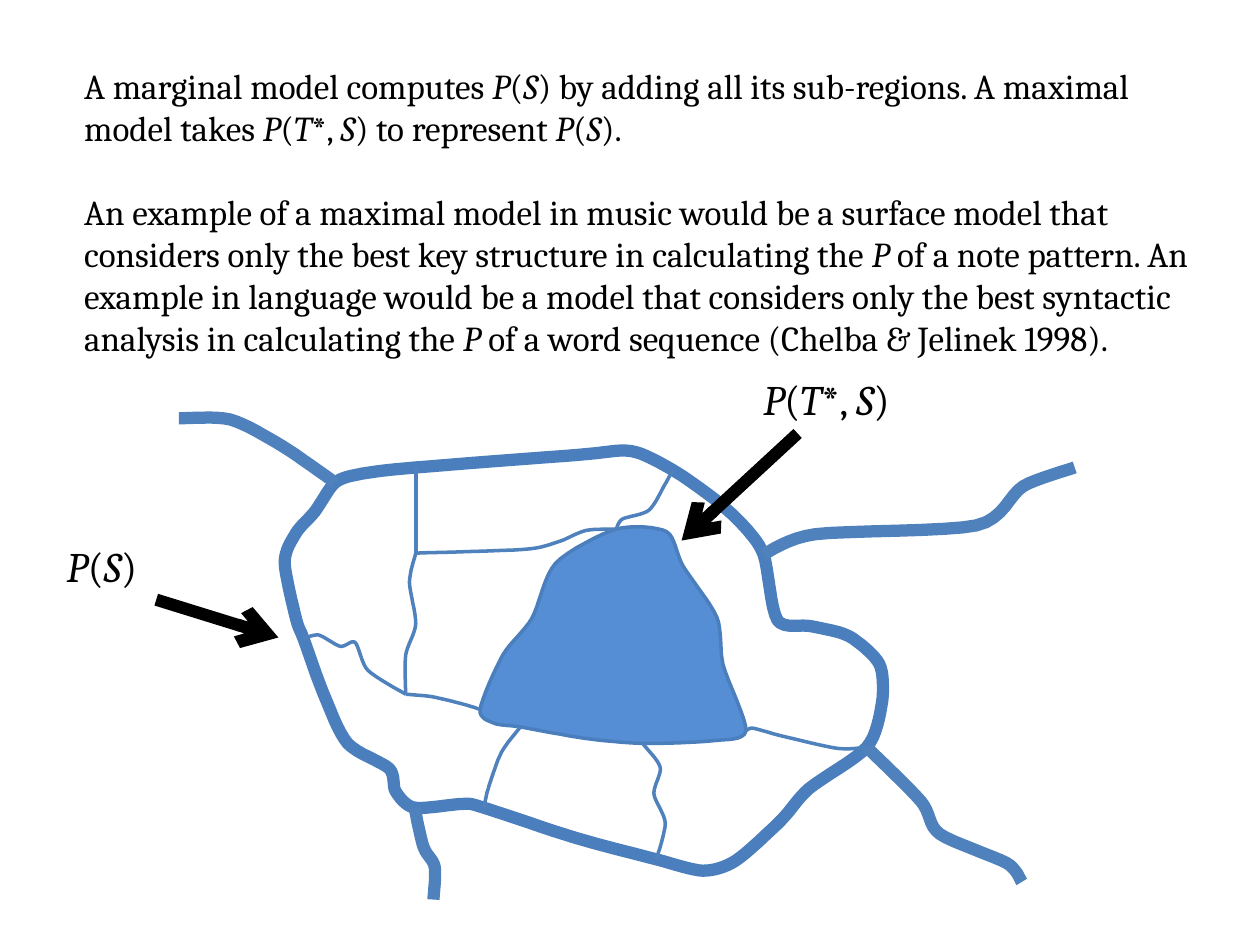
from lxml.etree import SubElement
from pptx import Presentation
from pptx.dml.color import RGBColor
from pptx.enum.shapes import MSO_CONNECTOR
from pptx.enum.text import MSO_AUTO_SIZE
from pptx.oxml.ns import qn
from pptx.util import Pt

COLORS = {"text": "000000", "outline": "4B7EBC", "branch": "4F81BD", "best": "558ED5"}
THICK, THIN = 7, 2  # line weights
UNIT = Pt(0.72)  # the map is plotted in hundredths of an inch
STEPS = 8  # pieces per bend, and the finer grid that they are rounded to
TENSION = 0.4  # 0 gives straight lines between the bends


def add_text(left, top, width, height, size, paragraphs, wrap):
    """Add a text box; underscores switch italics on and off."""
    box = page.shapes.add_textbox(Pt(left), Pt(top), Pt(width), Pt(height))
    frame = box.text_frame
    frame.word_wrap = wrap
    frame.auto_size = MSO_AUTO_SIZE.SHAPE_TO_FIT_TEXT
    for index, text in enumerate(paragraphs):
        para = frame.add_paragraph() if index else frame.paragraphs[0]
        para.space_before = Pt(24 if index else 0)
        for position, piece in enumerate(text.split("_")):
            if piece:
                span = para.add_run()
                span.text = piece
                span.font.name = "Cambria"
                span.font.size = Pt(size)
                span.font.italic = position % 2 == 1
                span.font.color.rgb = RGBColor.from_string(COLORS["text"])


def add_curve(bends, color, weight, closed=False, fill=None):
    """Draw a smooth line through the bends: a cubic Hermite curve between neighbours."""
    if closed:
        knots = [bends[-1], *bends, *bends[:2]]
    else:
        knots = [bends[0], *bends, bends[-1]]
    points = [(x * STEPS, y * STEPS) for x, y in bends[:1]]
    for before, start, end, after in zip(knots, knots[1:], knots[2:], knots[3:]):
        for step in range(1, STEPS + 1):
            t = step / STEPS
            arrive = t * t * (3 - 2 * t)
            points.append(tuple(
                STEPS * ((1 - arrive) * b + arrive * c
                         + TENSION * t * (1 - t) * ((1 - t) * (c - a) - t * (d - b)))
                for a, b, c, d in zip(before, start, end, after)))
    builder = page.shapes.build_freeform(*points[0], scale=UNIT / STEPS)
    builder.add_line_segments(points[1:], close=closed)
    curve = builder.convert_to_shape()
    curve.shadow.inherit = False
    if fill:
        curve.fill.solid()
        curve.fill.fore_color.rgb = RGBColor.from_string(COLORS[fill])
    else:
        curve.fill.background()
    curve.line.color.rgb = RGBColor.from_string(COLORS[color])
    curve.line.width = Pt(weight)
    SubElement(curve.line._get_or_add_ln(), qn("a:round"))


deck = Presentation()
deck.slide_width, deck.slide_height = Pt(720), Pt(540)
page = deck.slides.add_slide(deck.slide_layouts[6])

# Explanation
add_text(41, 33.1, 652.3, 181.4, 20, [
    "A marginal model computes _P_(_S_) by adding all its sub-regions. A maximal model "
    "takes _P_(_T_*, _S_) to represent _P_(_S_).",
    "An example of a maximal model in music would be a surface model that considers only "
    "the best key structure in calculating the _P_ of a note pattern. An example in "
    "language would be a model that considers only the best syntactic analysis in "
    "calculating the _P_ of a word sequence (Chelba & Jelinek 1998).",
], True)

# Junctions on the outer region, counter-clockwise, each with the bends up to the next one
outer_region = {
    "northwest": ((266, 383), [(250, 406), (235, 423), (226, 446), (235, 491)]),
    "west": ((241, 507), [(257, 551), (276, 590), (309, 610), (314, 628)]),
    "southwest": ((329, 641), [(368, 638)]),
    "south left": ((384, 641), [(457, 665)]),
    "south": ((521, 682), [(558, 691), (584, 683), (620, 651), (642, 626)]),
    "southeast": ((688, 593), [(700, 558), (698, 527), (674, 505), (644, 497), (617, 492)]),
    "northeast": ((606, 440), [(589, 416), (567, 396)]),
    "north right": ((534, 373), [(501, 358), (459, 361)]),
    "north": ((330, 371), [(287, 376)]),
}
# Corners of the best sub-region, in the same form
best_region = {
    "apex": ((489, 420), [(441, 447), (422, 491), (399, 520)]),
    "left": ((381, 563), [(392, 574)]),
    "foot left": ((413, 577), [(464, 586)]),
    "foot": ((510, 590), [(565, 588)]),
    "right": ((592, 580), [(574, 528), (569, 490), (542, 449), (529, 422)]),
}
# Where borders meet, and where branches run off
places = {
    "upper fork": (330, 439), "lower fork": (322, 551),
    "far northeast": (853, 371), "far southeast": (811, 700),
    "far southwest": (344, 714), "far northwest": (142, 332),
}
places.update({name: corner
               for region in (outer_region, best_region)
               for name, (corner, _) in region.items()})

# Regions P(S) and P(T*, S)
for region, weight, fill in [(outer_region, THICK, None), (best_region, THIN, "best")]:
    ring = [point for corner, bends in region.values() for point in (corner, *bends)]
    add_curve(ring, "outline", weight, True, fill)

# Thin borders between sub-regions and thick branches out of the outer region
routes = {
    THIN: [
        ("west", [(253, 504), (270, 513), (282, 510), (292, 532)], "lower fork"),
        ("lower fork", [(343, 553), (368, 559)], "left"),
        ("north", [(330, 421)], "upper fork"),
        ("upper fork", [(325, 462), (330, 495), (322, 520)], "lower fork"),
        ("upper fork", [(416, 436), (443, 430), (465, 421)], "apex"),
        ("apex", [(494, 412), (515, 405), (528, 384)], "north right"),
        ("foot left", [(398, 597), (388, 624)], "south left"),
        ("foot", [(524, 609), (519, 630), (528, 653)], "south"),
        ("right", [(598, 578), (620, 584), (665, 594)], "southeast"),
    ],
    THICK: [
        ("northeast", [(647, 424), (775, 417), (812, 386)], "far northeast"),
        ("southeast", [(731, 636), (746, 662), (799, 685)], "far southeast"),
        ("southwest", [(336, 672), (345, 688)], "far southwest"),
        ("northwest", [(224, 354), (183, 333)], "far northwest"),
    ],
}
for weight, lines in routes.items():
    for start, bends, end in lines:
        add_curve([places[start], *bends, places[end]], "branch", weight)

# Labels
add_text(429.1, 210.2, 101.5, 36, 24, ["_P_(_T_*, _S_)"], False)
add_text(31, 305.3, 64, 36, 24, ["_P_(_S_)"], False)

# Arrows from the labels to their regions
for ends in [(455.8, 247.7, 389.5, 308.9), (89.3, 342.7, 159.1, 364.3)]:
    arrow = page.shapes.add_connector(MSO_CONNECTOR.STRAIGHT, *[Pt(end) for end in ends])
    arrow.line.color.rgb = RGBColor.from_string(COLORS["text"])
    arrow.line.width = Pt(THICK)
    SubElement(arrow.line._get_or_add_ln(), qn("a:tailEnd"), type="arrow")
    SubElement(arrow._element.spPr, qn("a:effectLst"))

deck.save("out.pptx")
